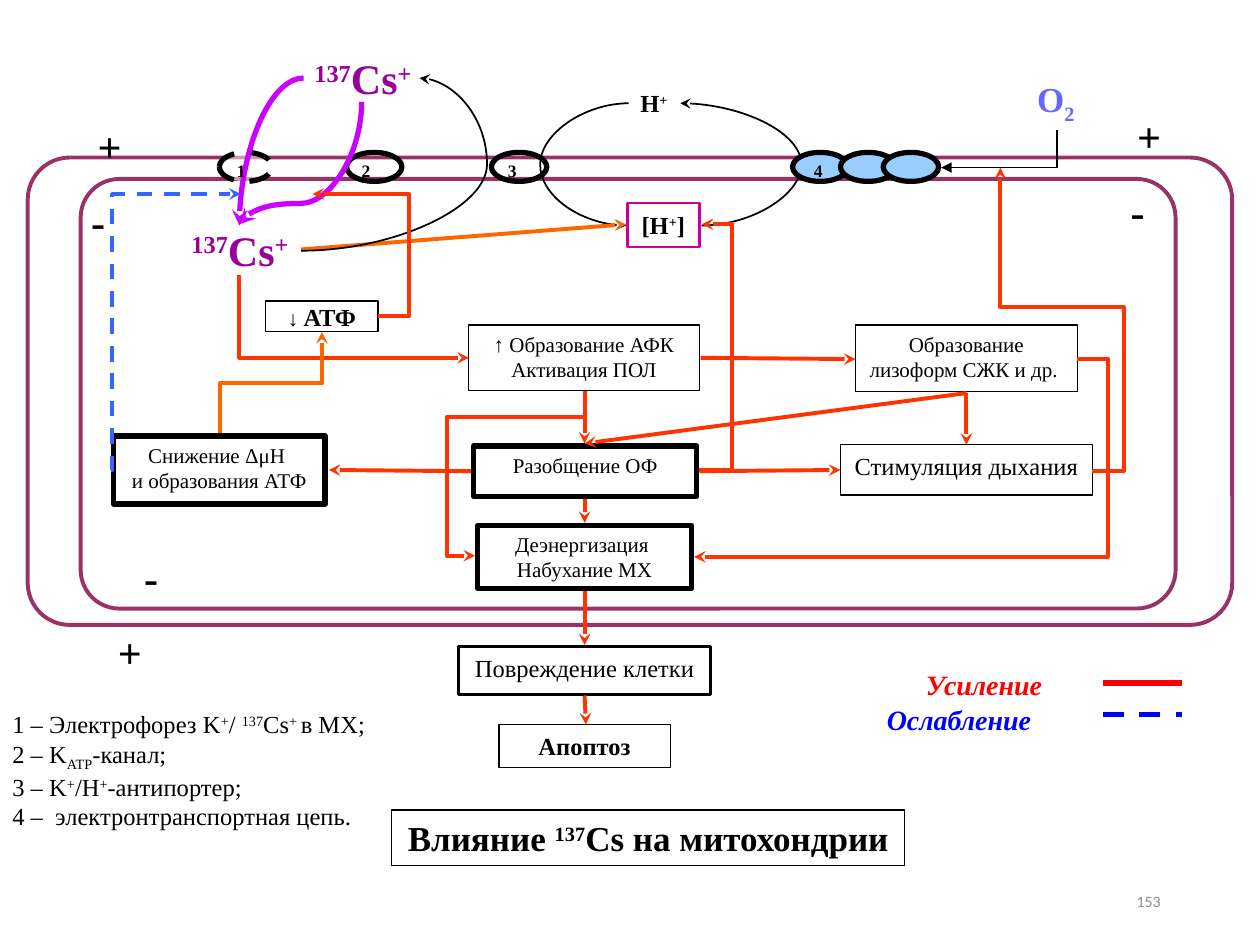
from pptx import Presentation
from pptx.dml.color import RGBColor
from pptx.enum.dml import MSO_LINE
from pptx.enum.shapes import MSO_CONNECTOR, MSO_SHAPE
from pptx.enum.text import MSO_ANCHOR as Anchor, PP_ALIGN as Align
from pptx.oxml.ns import qn
from pptx.util import Cm, Pt
from lxml.etree import SubElement

BLACK = RGBColor(0x00, 0x00, 0x00)
WHITE = RGBColor(0xFF, 0xFF, 0xFF)
GRAY = RGBColor(0x8C, 0x8C, 0x8C)
PLUM = RGBColor(0x99, 0x33, 0x66)
PURPLE = RGBColor(0x99, 0x00, 0x99)
VIOLET = RGBColor(0xCC, 0x00, 0xFF)
MAGENTA = RGBColor(0xCC, 0x00, 0x99)
SKY = RGBColor(0x99, 0xCC, 0xFF)
PERIWINKLE = RGBColor(0x66, 0x66, 0xFF)
AZURE = RGBColor(0x33, 0x66, 0xFF)
BLUE = RGBColor(0x00, 0x00, 0xFF)
RED = RGBColor(0xFF, 0x00, 0x00)
SCARLET = RGBColor(0xFF, 0x33, 0x00)
ORANGE = RGBColor(0xFF, 0x66, 0x00)

CM_PER_INCH = 2.54
MARKS = {"^": ("baseline", "30000"), "_": ("baseline", "-25000"),
         "*": ("b", "1"), "~": ("sz", "1200")}

MEMBRANES = [(0.22, 1.25, 9.56, 3.71), (0.64, 1.42, 8.69, 3.41)]

PLAIN = {"size": Pt(12)}
LARGE = {"size": Pt(14)}
BOLD = {"size": Pt(14), "bold": True}
TITLE = {"size": Pt(20), "bold": True}
SIGN = {"size": Pt(24), "bold": True}
NUMBER = {"size": Pt(10), "bold": True}
CESIUM = {"size": Pt(24), "bold": True, "color": PURPLE}
OXYGEN = {"size": Pt(20), "bold": True, "color": PERIWINKLE}
STRONGER = {"size": Pt(16), "bold": True, "italic": True, "color": RED}
WEAKER = {**STRONGER, "color": BLUE}
PAGE = {"size": Pt(9), "color": GRAY, "name": "Calibri"}

TOP = {"vertical_anchor": Anchor.TOP, "word_wrap": True}
MIDDLE = {"vertical_anchor": Anchor.MIDDLE, "word_wrap": True}
ONE_LINE = {"vertical_anchor": Anchor.MIDDLE, "word_wrap": False}
TIGHT = {**MIDDLE, "margin_left": 0, "margin_right": 0, "margin_top": 0, "margin_bottom": 0}

PROCESS = MSO_SHAPE.FLOWCHART_PROCESS
RECTANGLE = MSO_SHAPE.RECTANGLE
BOXES = [
    (PROCESS, (3.72, 2.58, 1.83, 0.52), "*↑| Образование АФК\nАктивация ПОЛ", PLAIN, TOP, WHITE, BLACK, 0.75),
    (PROCESS, (6.79, 2.58, 1.76, 0.53), "Образование лизоформ СЖК и др. ", PLAIN, TOP, WHITE, BLACK, 0.75),
    (PROCESS, (3.76, 3.54, 1.77, 0.4), "Разобщение ОФ", PLAIN, TOP, WHITE, BLACK, 3),
    (PROCESS, (3.79, 4.17, 1.7, 0.5), "Деэнергизация \nНабухание МХ", PLAIN, TOP, WHITE, BLACK, 3),
    (PROCESS, (3.64, 5.13, 2, 0.38), "Повреждение клетки", LARGE, TOP, WHITE, BLACK, 1.5),
    (PROCESS, (3.96, 5.75, 1.36, 0.34), "Апоптоз", BOLD, TOP, WHITE, BLACK, 0.75),
    (PROCESS, (6.67, 3.53, 2, 0.4), "Стимуляция дыхания", LARGE, TOP, WHITE, BLACK, 0.75),
    (RECTANGLE, (0.9, 3.46, 1.68, 0.54), "Снижение ΔμH \nи образования АТФ", PLAIN, TOP, WHITE, BLACK, 3),
    (RECTANGLE, (3.11, 6.43, 4.07, 0.44), "Влияние |^137|Cs на митохондрии", TITLE, ONE_LINE, None, BLACK, 0.75),
    (RECTANGLE, (4.98, 1.61, 0.57, 0.35), "[H|^+|]", BOLD, ONE_LINE, None, MAGENTA, 1.5),
    (RECTANGLE, (2.11, 2.39, 0.89, 0.24), "~↓ |АТФ", BOLD, TIGHT, None, BLACK, 0.75),
]

CHANNELS = [(2.75, None), (3.9, None), (6.29, SKY), (6.67, SKY), (7.01, SKY)]

LABELS = [
    ((1.42, 1.78, 0.97, 0.4), "^137|Cs|^+", CESIUM, TIGHT, Align.CENTER),
    ((2.42, 0.42, 0.92, 0.4), "^137|Cs|^+", CESIUM, TIGHT, Align.CENTER),
    ((4.98, 0.65, 0.42, 0.33), "H|^+", BOLD, ONE_LINE, Align.CENTER),
    ((8.1, 0.59, 0.56, 0.43), "O|_2", OXYGEN, MIDDLE, Align.CENTER),
    ((7.25, 5.25, 1.89, 0.22), "Усиление", STRONGER, TOP, Align.LEFT),
    ((6.94, 5.53, 1.98, 0.23), "Ослабление", WEAKER, TOP, Align.LEFT),
    ((0, 5.58, 3.66, 1.03),
     "1 – Электрофорез K|^+|/ |^137|Cs|^+ |в МХ;\n2 – K|_ATP|-канал;\n"
     "3 – K|^+|/H|^+|-антипортер;\n4 –  электронтранспортная цепь.", LARGE, TOP, Align.LEFT),
    ((7.06, 6.95, 2.25, 0.4), "153", PAGE, MIDDLE, Align.RIGHT),
]
SIGNS = [("+", 0.59, 0.91), ("-", 0.5, 1.5), ("+", 8.84, 0.83),
         ("-", 8.75, 1.42), ("+", 0.75, 4.92), ("-", 0.92, 4.33)]
CHANNEL_NUMBERS = [("1", 1.78), ("2", 2.77), ("3", 3.93), ("4", 6.36)]
LABELS += [((left, top, 0.56, 0.5), sign, SIGN, MIDDLE, Align.CENTER) for sign, left, top in SIGNS]
LABELS += [((left, 1.22, 0.27, 0.27), number, NUMBER, ONE_LINE, Align.CENTER)
           for number, left in CHANNEL_NUMBERS]

STRAIGHT_LINES = [
    (5.56, 2.84, 6.79, 2.85, SCARLET), (4.64, 3.1, 4.64, 3.52, SCARLET),
    (7.67, 3.12, 7.67, 3.53, SCARLET), (5.55, 3.74, 6.67, 3.73, SCARLET),
    (4.64, 3.96, 4.64, 4.15, SCARLET), (4.64, 4.69, 4.64, 5.12, SCARLET),
    (4.64, 5.52, 4.65, 5.75, SCARLET), (3.74, 3.74, 2.61, 3.73, SCARLET),
    (7.67, 3.12, 4.64, 3.52, SCARLET), (2.39, 1.98, 4.97, 1.78, ORANGE),
]
LEGEND_LINES = [(5.42, RED, None), (5.67, BLUE, MSO_LINE.DASH)]

PROTON_LOOPS = [
    ("curvedConnector3", (5.4, 0.82, 0.17, 0.97), "hv", 0, [-4.65], BLACK, 1, {}),
    ("curvedConnector3", (4.97, 0.82, 0.02, 0.97), "h", 0, [35], BLACK, 1, {}),
]
ROUTES = [
    ("curvedConnector2", (1.9, 0.62, 0.51, 1.17), "h", 0, [], VIOLET, 3, {}),
    ("curvedConnector3", (1.9, 0.81, 0.97, 0.97), "", 90, [0.83], VIOLET, 3, {}),
    ("curvedConnector3", (2.39, 0.62, 0.94, 1.37), "h", 0, [-0.57], BLACK, 1, {"end": "headEnd"}),
    ("bentConnector2", (7.78, 0.72, 0.3, 0.92), "", 90, [], BLACK, 1, {"arrow": "triangle"}),
    ("bentConnector3", (5.51, 2.85, 3.04, 1.57), "h", 0, [-0.08], SCARLET, 2.25, {}),
    ("bentConnector4", (7.94, 1.33, 0.73, 2.41), "hv", 0, [-0.34, 0.54], SCARLET, 2.25, {}),
    ("bentConnector3", (0.88, 1.54, 1.03, 2.19), "v", 0, [0.01], AZURE, 2.25, {"dash": MSO_LINE.DASH}),
    ("bentConnector2", (2.48, 1.6, 0.66, 1.82), "h", 270, [], SCARLET, 2.25, {}),
    ("bentConnector3", (5.55, 1.78, 0.02, 1.95), "v", 0, [13], SCARLET, 2.25, {}),
    ("bentConnector3", (2.48, 1.54, 0.52, 0.97), "hv", 0, [-0.48], SCARLET, 2.25, {}),
    ("bentConnector3", (1.75, 2.63, 0.8, 0.81), "", 270, [0.49], ORANGE, 2.25, {}),
    ("bentConnector4", (3.55, 3.32, 1.31, 0.87), "", 90, [0.16, 1.26], SCARLET, 2.25, {}),
]


def lengths(inches):
    return [Cm(value * CM_PER_INCH) for value in inches]


def write(shape, text, font, frame_format, alignment):
    frame = shape.text_frame
    for name, value in frame_format.items():
        setattr(frame, name, value)
    for index, line in enumerate(text.split("\n")):
        paragraph = frame.paragraphs[0] if index == 0 else frame.add_paragraph()
        paragraph.alignment = alignment
        for piece in line.split("|"):
            run = paragraph.add_run()
            mark = MARKS.get(piece[0]) if len(piece) > 1 else None
            run.text = piece[1:] if mark else piece
            for name, value in {"name": "Times New Roman", "color": BLACK, **font}.items():
                if name == "color":
                    run.font.color.rgb = value
                else:
                    setattr(run.font, name, value)
            if mark:
                run._r.get_or_add_rPr().set(*mark)


def add_outline(slide, kind, place, fill, color, width):
    shape = slide.shapes.add_shape(kind, *lengths(place))
    shape.shadow.inherit = False
    if fill is None:
        shape.fill.background()
    else:
        shape.fill.solid()
        shape.fill.fore_color.rgb = fill
    shape.line.color.rgb = color
    shape.line.width = Pt(width)
    return shape


def add_line(slide, kind, points, color, width, dash=None, arrow="stealth", end="tailEnd"):
    connector = slide.shapes.add_connector(kind, *lengths(points))
    for name, value in {"width": Pt(width), "dash_style": dash}.items():
        setattr(connector.line, name, value)
    connector.line.color.rgb = color
    properties = connector._element.spPr
    if arrow:
        SubElement(connector.line._get_or_add_ln(), qn("a:" + end), type=arrow)
    SubElement(properties, qn("a:effectLst"))
    return connector


def add_route(slide, preset, place, flip, rotation, adjustments, color, width, options):
    left, top, wide, high = place
    across = (left + wide, left) if "h" in flip else (left, left + wide)
    down = (top + high, top) if "v" in flip else (top, top + high)
    kind = MSO_CONNECTOR.CURVE if preset.startswith("curved") else MSO_CONNECTOR.ELBOW
    points = (across[0], down[0], across[1], down[1])
    properties = add_line(slide, kind, points, color, width, **options)._element.spPr
    if rotation:
        properties.find(qn("a:xfrm")).set("rot", str(rotation * 60000))
    geometry = properties.find(qn("a:prstGeom"))
    geometry.set("prst", preset)
    guides = geometry.find(qn("a:avLst"))
    if guides is None:
        guides = SubElement(geometry, qn("a:avLst"))
    for number, value in enumerate(adjustments, 1):
        SubElement(guides, qn("a:gd"), name=f"adj{number}", fmla=f"val {round(value * 100000)}")


def main():
    presentation = Presentation()
    presentation.slide_width, presentation.slide_height = lengths((10, 7.5))
    slide = presentation.slides.add_slide(presentation.slide_layouts[6])

    for place in MEMBRANES:
        membrane = add_outline(slide, MSO_SHAPE.ROUNDED_RECTANGLE, place, None, PLUM, 2.25)
        membrane.adjustments[0] = 0.09
    for kind, place, text, font, frame_format, fill, color, width in BOXES:
        box = add_outline(slide, kind, place, fill, color, width)
        write(box, text, font, frame_format, Align.CENTER)
    for loop in PROTON_LOOPS:
        add_route(slide, *loop)

    pore = add_outline(slide, MSO_SHAPE.OVAL, (1.74, 1.21, 0.42, 0.23), WHITE, BLACK, 3)
    pore.line.dash_style = MSO_LINE.DASH
    pore_color = pore._element.spPr.find(qn("a:solidFill")).find(qn("a:srgbClr"))
    SubElement(pore_color, qn("a:alpha"), val="50000")
    for left, fill in CHANNELS:
        add_outline(slide, MSO_SHAPE.OVAL, (left, 1.21, 0.44, 0.23), fill, BLACK, 3)

    for *points, color in STRAIGHT_LINES:
        add_line(slide, MSO_CONNECTOR.STRAIGHT, points, color, 2.25)
    for height, color, dash in LEGEND_LINES:
        add_line(slide, MSO_CONNECTOR.STRAIGHT, (8.75, height, 9.38, height), color, 3, dash, None)
    for route in ROUTES:
        add_route(slide, *route)
    for place, text, font, frame_format, alignment in LABELS:
        write(slide.shapes.add_textbox(*lengths(place)), text, font, frame_format, alignment)

    presentation.save("out.pptx")


if __name__ == "__main__":
    main()
